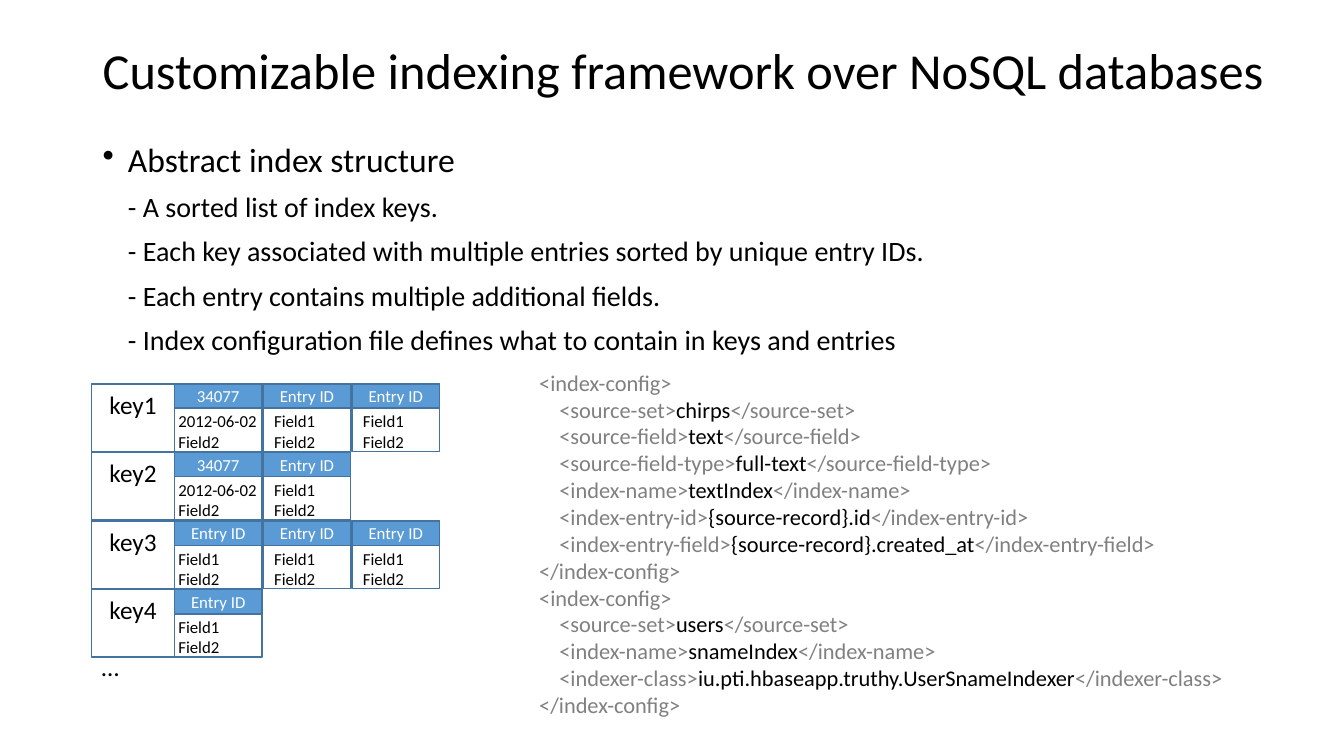
from lxml.etree import SubElement
from pptx import Presentation
from pptx.dml.color import RGBColor
from pptx.enum.shapes import MSO_SHAPE
from pptx.enum.text import MSO_ANCHOR, PP_ALIGN
from pptx.oxml.ns import qn
from pptx.util import Pt

SCALE = 9144
BLACK, WHITE, GREY = "000000", "FFFFFF", "808080"
BLUE, EDGE = "5B9BD5", "43739E"

TITLE = "Customizable indexing framework over NoSQL databases"
HEAD = "Abstract index structure"
POINTS = [
    "- A sorted list of index keys.",
    "- Each key associated with multiple entries sorted by unique entry IDs.",
    "- Each entry contains multiple additional fields.",
    "- Index configuration file defines what to contain in keys and entries",
]
PLAIN = ("Entry ID", "Field1")
DATED = ("34077", "2012-06-02")
KEYS = [
    ("key1", [DATED, PLAIN, PLAIN]),
    ("key2", [DATED, PLAIN]),
    ("key3", [PLAIN, PLAIN, PLAIN]),
    ("key4", [PLAIN]),
]
CONFIGS = [
    [
        ("source-set", "chirps"),
        ("source-field", "text"),
        ("source-field-type", "full-text"),
        ("index-name", "textIndex"),
        ("index-entry-id", "{source-record}.id"),
        ("index-entry-field", "{source-record}.created_at"),
    ],
    [
        ("source-set", "users"),
        ("index-name", "snameIndex"),
        ("indexer-class", "iu.pti.hbaseapp.truthy.UserSnameIndexer"),
    ],
]


def px(*sizes):
    return [round(size * SCALE) for size in sizes]


def color(code):
    return RGBColor.from_string(code)


def style(para, size, code=None):
    para.font.name = "Calibri"
    para.font.size = Pt(size)
    if code:
        para.font.color.rgb = color(code)


def indent(para, left, first=0):
    props = para._p.get_or_add_pPr()
    props.set("marL", str(px(left)[0]))
    props.set("indent", str(px(first)[0]))
    return props


def add_text(slide, box, lines, size, code=BLACK):
    frame = slide.shapes.add_textbox(*px(*box)).text_frame
    frame.word_wrap = True
    frame.text = "\n".join(lines)
    for para in frame.paragraphs:
        style(para, size, code)
    return frame


def add_rect(slide, box, fill=None, text="", size=12, code=BLACK, anchor=MSO_ANCHOR.TOP):
    rect = slide.shapes.add_shape(MSO_SHAPE.RECTANGLE, *px(*box))
    rect.shadow.inherit = False
    if fill:
        rect.fill.solid()
        rect.fill.fore_color.rgb = color(fill)
    else:
        rect.fill.background()
    rect.line.color.rgb = color(EDGE)
    rect.line.width = Pt(1)
    if text:
        frame = rect.text_frame
        frame.text = text
        frame.vertical_anchor = anchor
        para = frame.paragraphs[0]
        para.alignment = PP_ALIGN.CENTER
        style(para, size, code)


def add_title(slide, box):
    frame = add_text(slide, box, [TITLE], 36)
    frame.vertical_anchor = MSO_ANCHOR.MIDDLE
    frame.paragraphs[0].line_spacing = 0.9


def add_points(slide, box):
    frame = add_text(slide, box, [HEAD, *POINTS], 20)
    for para in frame.paragraphs:
        para.line_spacing = 0.9
        para.space_before = Pt(10)
        indent(para, 25)
    head = frame.paragraphs[0]
    head.font.size = Pt(24)
    props = indent(head, 25, -25)
    mark = SubElement(props, qn("a:buChar"))
    mark.set("char", "•")
    props.remove(mark)
    props.insert_element_before(mark, "a:tabLst", "a:defRPr", "a:extLst")


def add_entry(slide, box, name, field, shift):
    left, top, width, height = box
    add_rect(slide, box)
    add_rect(slide, (left, top, width, 24), BLUE, name, 12, WHITE, MSO_ANCHOR.MIDDLE)
    add_text(slide, (left + shift, top + 22, 105, 50), [field, "Field2"], 12)


def add_index(slide, box):
    left, top, width, height = box
    step = height // len(KEYS)
    key_w, cell_w = 82, 88
    for row, (key, entries) in enumerate(KEYS):
        y = top + row * step
        for col, (name, field) in enumerate(entries):
            cell = (left + key_w + col * cell_w, y, cell_w - 1, step - 1)
            add_entry(slide, cell, name, field, 1 if col else -6)
        add_rect(slide, (left, y, key_w, step - 1), None, key, 18)
    add_text(slide, (left, top + 260, key_w, 40), ["…"], 18)


def add_code(slide, box):
    lines = []
    for config in CONFIGS:
        lines += [("index-config", None), *config, ("/index-config", None)]
    frame = add_text(slide, box, [""] * len(lines), 16, None)
    for para, (tag, value) in zip(frame.paragraphs, lines):
        parts = [(f"<{tag}>", GREY)]
        if value:
            indent(para, 20)
            parts += [(value, BLACK), (f"</{tag}>", GREY)]
        for text, code in parts:
            run = para.add_run()
            run.text = text
            run.font.color.rgb = color(code)


def main():
    deck = Presentation()
    deck.slide_width, deck.slide_height = px(1333, 750)
    slide = deck.slides.add_slide(deck.slide_layouts[6])
    add_title(slide, (92, 0, 1197, 145))
    add_points(slide, (92, 137, 1181, 228))
    add_index(slide, (91, 381, 346, 272))
    add_code(slide, (525, 361, 734, 360))
    deck.save("out.pptx")


if __name__ == "__main__":
    main()
